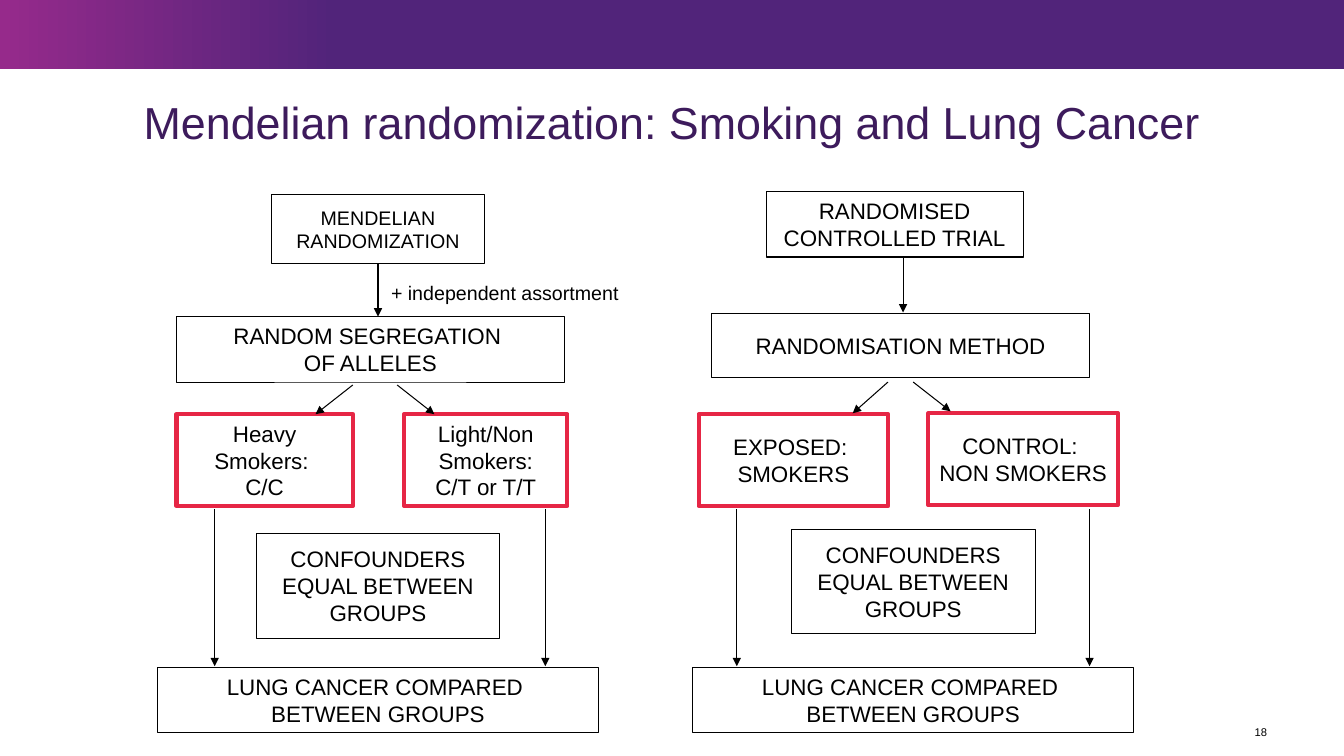
from dataclasses import dataclass
from typing import Optional

import pptx
import pptx.dml.color
import pptx.enum.dml
import pptx.enum.shapes
import pptx.enum.text
import pptx.oxml
import pptx.oxml.ns
import pptx.util

Pt = pptx.util.Pt
ALIGN = pptx.enum.text.PP_ALIGN
FONT = "Arial"
BLACK, WHITE, RED = "000000", "FFFFFF", "E62645"
PURPLE, MAGENTA, TITLE_PURPLE = "51247A", "962A8B", "3D1B5C"
COLUMN_SHIFT = 382.3
GROUP_ARROW_TOP, GROUP_ARROW_BOTTOM = 363.6, 475.9


@dataclass(frozen=True)
class Step:
    text: str
    left: float
    top: float
    width: float
    height: float
    size: float = 16
    line: str = BLACK
    weight: float = 0.75


@dataclass(frozen=True)
class Arrow:
    x1: float
    y1: float
    x2: float
    y2: float
    source: Optional[Step] = None


@dataclass(frozen=True)
class Label:
    text: str
    left: float
    top: float
    width: float
    height: float
    size: float
    color: str = BLACK
    align: ALIGN = ALIGN.LEFT
    inset: float = 0
    spacing: float = 1


def rgb(color: str) -> pptx.dml.color.RGBColor:
    return pptx.dml.color.RGBColor.from_string(color)


def set_text(shape, text: str, size: float, color: str, align: ALIGN) -> None:
    frame = shape.text_frame
    frame.text = text
    frame.word_wrap = True
    frame.vertical_anchor = pptx.enum.text.MSO_ANCHOR.MIDDLE
    for paragraph in frame.paragraphs:
        paragraph.alignment = align
        for run in paragraph.runs:
            run.font.name = FONT
            run.font.size = Pt(size)
            run.font.color.rgb = rgb(color)


def add_rectangle(slide, left: float, top: float, width: float, height: float):
    rectangle = slide.shapes.add_shape(
        pptx.enum.shapes.MSO_SHAPE.RECTANGLE, Pt(left), Pt(top), Pt(width), Pt(height))
    rectangle.shadow.inherit = False
    return rectangle


def add_banner(slide) -> None:
    banner = add_rectangle(slide, 0, 0, 960, 49.5)
    banner.line.fill.background()
    banner.fill.gradient()
    banner.fill.gradient_angle = 0
    stops = zip(banner.fill.gradient_stops, ((0, MAGENTA), (0.25, PURPLE)))
    for stop, (position, color) in stops:
        stop.position = position
        stop.color.rgb = rgb(color)


def add_step(slide, step: Step):
    box = add_rectangle(slide, step.left, step.top, step.width, step.height)
    box.fill.solid()
    box.fill.fore_color.rgb = rgb(WHITE)
    box.line.color.rgb = rgb(step.line)
    box.line.width = Pt(step.weight)
    set_text(box, step.text, step.size, BLACK, ALIGN.CENTER)
    return box


def add_arrow(slide, arrow: Arrow, boxes: dict) -> None:
    connector = slide.shapes.add_connector(
        pptx.enum.shapes.MSO_CONNECTOR.STRAIGHT,
        Pt(arrow.x1), Pt(arrow.y1), Pt(arrow.x2), Pt(arrow.y2))
    if arrow.source:
        connector.begin_connect(boxes[arrow.source], 2)
    connector.line.color.rgb = rgb(BLACK)
    connector.line.width = Pt(0.75)
    outline = connector.line._get_or_add_ln()
    pptx.oxml.ns.qn("a:tailEnd")
    outline.append(pptx.oxml.parse_xml(
        f'<a:tailEnd {pptx.oxml.ns.nsdecls("a")} type="triangle"/>'))
    connector._element.spPr.append(pptx.oxml.parse_xml(
        f'<a:effectLst {pptx.oxml.ns.nsdecls("a")}/>'))


def add_label(slide, label: Label) -> None:
    box = slide.shapes.add_textbox(
        Pt(label.left), Pt(label.top), Pt(label.width), Pt(label.height))
    set_text(box, label.text, label.size, label.color, label.align)
    frame = box.text_frame
    frame.margin_left = frame.margin_right = Pt(label.inset)
    frame.margin_top = frame.margin_bottom = Pt(label.inset / 2)
    frame.paragraphs[0].line_spacing = label.spacing


MENDELIAN = Step("MENDELIAN RANDOMIZATION", 193.7, 139, 152.6, 49, size=14)

STEPS = [
    MENDELIAN,
    Step("RANDOMISED CONTROLLED TRIAL", 547.2, 136.8, 183.6, 46.8),
    Step("RANDOM SEGREGATION \nOF ALLELES", 126, 226.1, 277.2, 46.8, weight=0.5),
    Step("RANDOMISATION METHOD", 508.3, 223.9, 270, 45.4, weight=0.5),
]
STEPS += [
    Step(text, left, top, width, 65.5, line=RED, weight=3)
    for text, left, top, width in (
        ("Heavy Smokers: \nC/C", 126, 295.9, 126),
        ("Light/Non Smokers:\nC/T or T/T", 288.7, 295.9, 116.6),
        ("EXPOSED: \nSMOKERS", 499, 295.9, 135.4),
        ("CONTROL: \nNON SMOKERS", 663.1, 295.2, 135.4),
    )
]
for shift, confounders_top in ((0, 380.9), (COLUMN_SHIFT, 378)):
    STEPS += [
        Step("CONFOUNDERS EQUAL BETWEEN GROUPS",
             182.9 + shift, confounders_top, 174.2, 74.9),
        Step("LUNG CANCER COMPARED \nBETWEEN GROUPS",
             112.3 + shift, 476.6, 315.4, 46.8),
    ]

ARROWS = [
    Arrow(270, 188, 270, 226.1, source=MENDELIAN),
    Arrow(645.1, 183.6, 645.1, 223.2),
    Arrow(252, 275, 225.4, 295.9),
    Arrow(283.7, 275, 310.3, 295.9),
    Arrow(634.3, 272.9, 609.1, 295.2),
    Arrow(652.3, 272.9, 679, 293.8),
]
ARROWS += [
    Arrow(x, GROUP_ARROW_TOP, x, GROUP_ARROW_BOTTOM)
    for x in (153.4, 389.5, 526.3, 778.3)
]

LABELS = [
    Label("Mendelian randomization: Smoking and Lung Cancer",
          43.9, 56.9, 872.6, 64.8, 32, TITLE_PURPLE, ALIGN.CENTER, spacing=0.9),
    Label("+ independent assortment", 272.2, 196.6, 222.5, 24.5, 14, inset=7.2),
    Label("18", 882.7, 513.4, 22.3, 18.7, 8, align=ALIGN.RIGHT),
]


def main() -> None:
    presentation = pptx.Presentation()
    presentation.slide_width = Pt(960)
    presentation.slide_height = Pt(540)
    slide = presentation.slides.add_slide(presentation.slide_layouts[6])
    add_banner(slide)
    boxes = {step: add_step(slide, step) for step in STEPS}
    for arrow in ARROWS:
        add_arrow(slide, arrow, boxes)
    for label in LABELS:
        add_label(slide, label)
    presentation.save("out.pptx")


if __name__ == "__main__":
    main()
